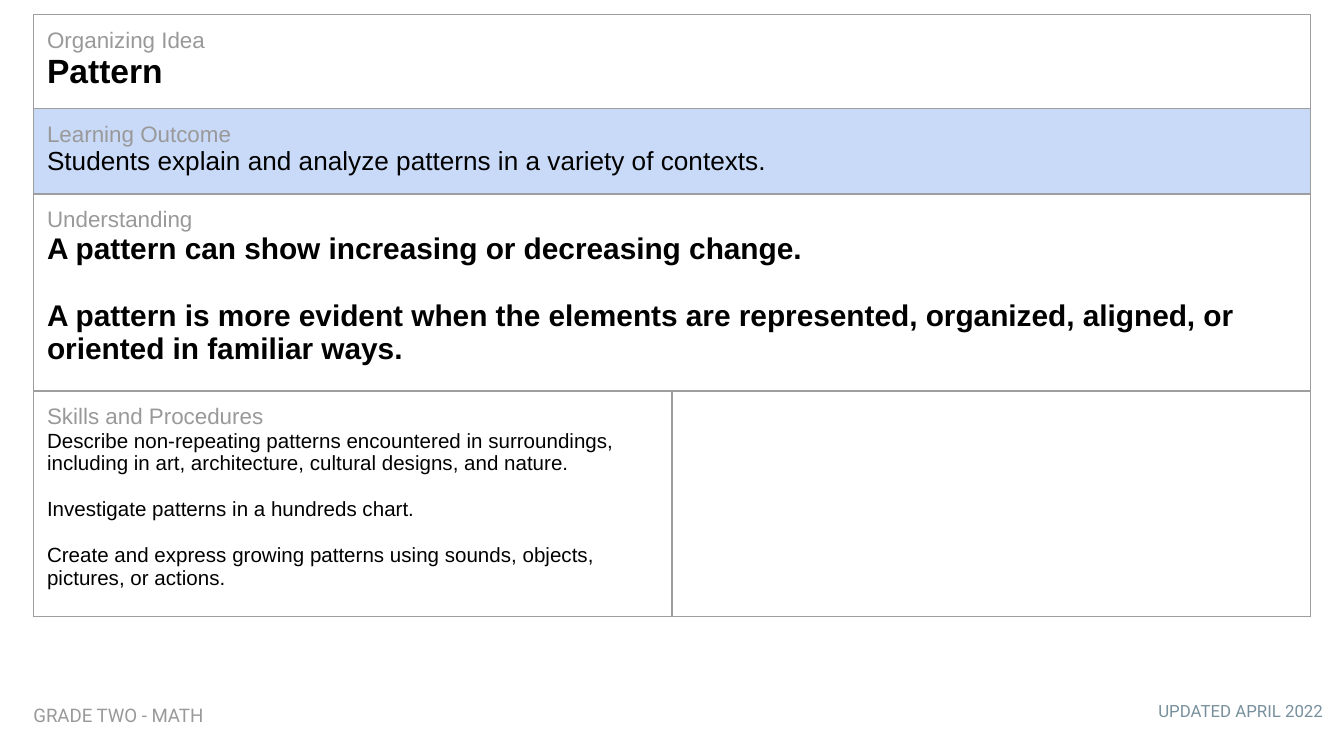
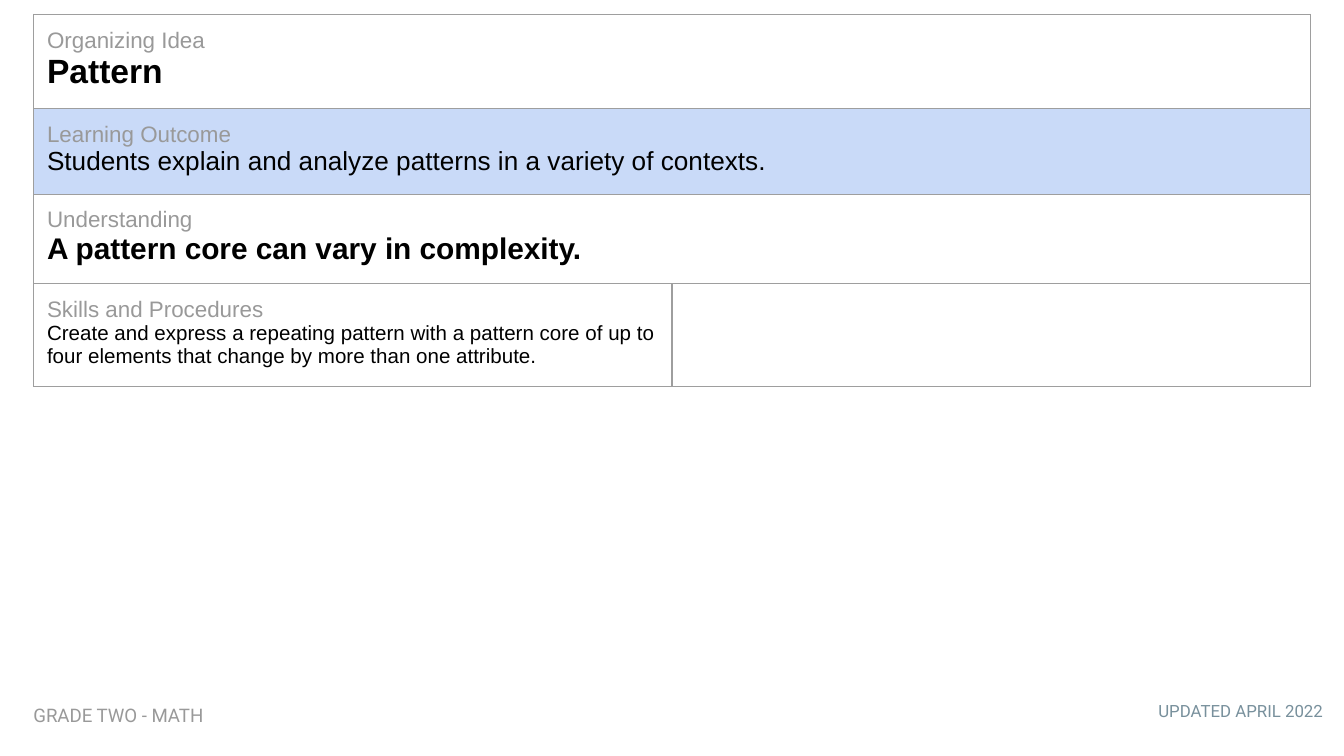
from lxml import etree
from pptx import Presentation
from pptx.dml.color import RGBColor
from pptx.enum import text
from pptx.oxml import ns
from pptx.util import Pt

BLACK = RGBColor(0x00, 0x00, 0x00)
GREY = RGBColor(0x99, 0x99, 0x99)
SLATE = RGBColor(0x78, 0x90, 0x9C)
BLUE = RGBColor(0xC9, 0xDA, 0xF8)
EDGE = RGBColor(0x9E, 0x9E, 0x9E)
PAD = Pt(7.2)
GAP = 1.12  # space between statements, as a share of the text size

LABEL = dict(name="Arial", size=Pt(12), bold=False)
# label, text size, bold, fill
ROWS = [
    ("Organizing Idea", 18, True, None),
    ("Learning Outcome", 14, False, BLUE),
    ("Understanding", 16, True, None),
    ("Skills and Procedures", 11, False, None),
]
# wording, left, top, width, height, size, colour, alignment
FOOTS = [
    ("UPDATED APRIL 2022", 521.3, 370, 194.4, 25.2, 9, SLATE, text.PP_ALIGN.RIGHT),
    ("GRADE TWO - MATH", 10.8, 370.8, 216.7, 26.6, 10, GREY, text.PP_ALIGN.LEFT),
]
HEAD = [
    ["Pattern"],
    ["Students explain and analyze patterns in a variety of contexts."],
]
# row heights, then the statements of each row
PAGES = [
    ([50.4, 45.8, 105.5, 121], HEAD + [
        ["A pattern can show increasing or decreasing change.",
         "A pattern is more evident when the elements are represented, "
         "organized, aligned, or oriented in familiar ways."],
        ["Describe non-repeating patterns encountered in surroundings, "
         "including in art, architecture, cultural designs, and nature.",
         "Investigate patterns in a hundreds chart.",
         "Create and express growing patterns using sounds, objects, "
         "pictures, or actions."],
    ]),
    ([50.4, 45.8, 47.5, 55.2], HEAD + [
        ["A pattern core can vary in complexity."],
        ["Create and express a repeating pattern with a pattern core of up to "
         "four elements that change by more than one attribute."],
    ]),
]


def write(para, words, color, style):
    run = para.add_run()
    run.text = words
    run.font.color.rgb = color
    for key, val in style.items():
        setattr(run.font, key, val)


def border(cell):
    props = cell._tc.get_or_add_tcPr()
    for i, side in enumerate(("lnL", "lnR", "lnT", "lnB")):
        line = etree.Element(ns.qn("a:" + side), w=str(Pt(0.75)))
        fill = etree.SubElement(line, ns.qn("a:solidFill"))
        etree.SubElement(fill, ns.qn("a:srgbClr"), val=str(EDGE))
        props.insert(i, line)


deck = Presentation()
deck.slide_width, deck.slide_height = Pt(720), Pt(405)

for highs, body in PAGES:
    slide = deck.slides.add_slide(deck.slide_layouts[6])

    # Curriculum table
    grid = slide.shapes.add_table(
        4, 2, Pt(18), Pt(7.8), Pt(684), Pt(sum(highs))).table
    grid.first_row = grid.horz_banding = False
    for r, (label, size, bold, fill) in enumerate(ROWS):
        grid.rows[r].height = Pt(highs[r])
        for cell in grid.rows[r].cells:
            for side in ("left", "right", "top", "bottom"):
                setattr(cell, "margin_" + side, PAD)
            if fill is None:
                cell.fill.background()
            else:
                cell.fill.solid()
                cell.fill.fore_color.rgb = fill
            border(cell)

        # The last row keeps its two columns
        cell = grid.cell(r, 0)
        if r < 3:
            cell.merge(grid.cell(r, 1))
        frame = cell.text_frame
        write(frame.paragraphs[0], label, GREY, LABEL)
        style = dict(name="Arial", size=Pt(size), bold=bold)
        for i, words in enumerate(body[r]):
            para = frame.add_paragraph()
            para.space_before = Pt(size * GAP if i else 0)
            write(para, words, BLACK, style)

    # Footers
    for words, left, top, wide, high, size, color, align in FOOTS:
        frame = slide.shapes.add_textbox(
            Pt(left), Pt(top), Pt(wide), Pt(high)).text_frame
        frame.word_wrap = True
        for side in ("left", "right", "top", "bottom"):
            setattr(frame, "margin_" + side, PAD)
        frame.paragraphs[0].alignment = align
        write(frame.paragraphs[0], words, color,
              dict(name="Roboto", size=Pt(size)))

deck.save("out.pptx")
